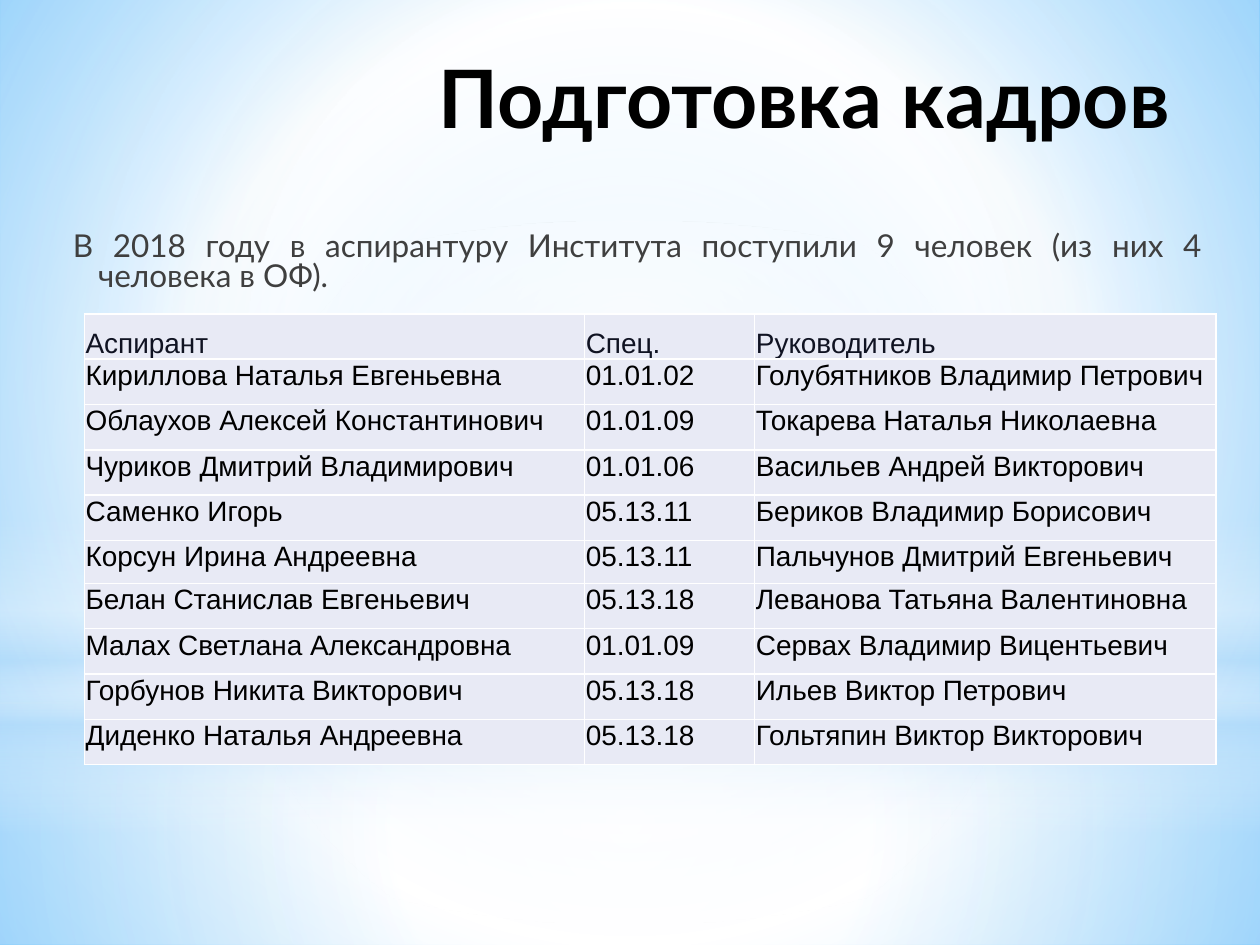
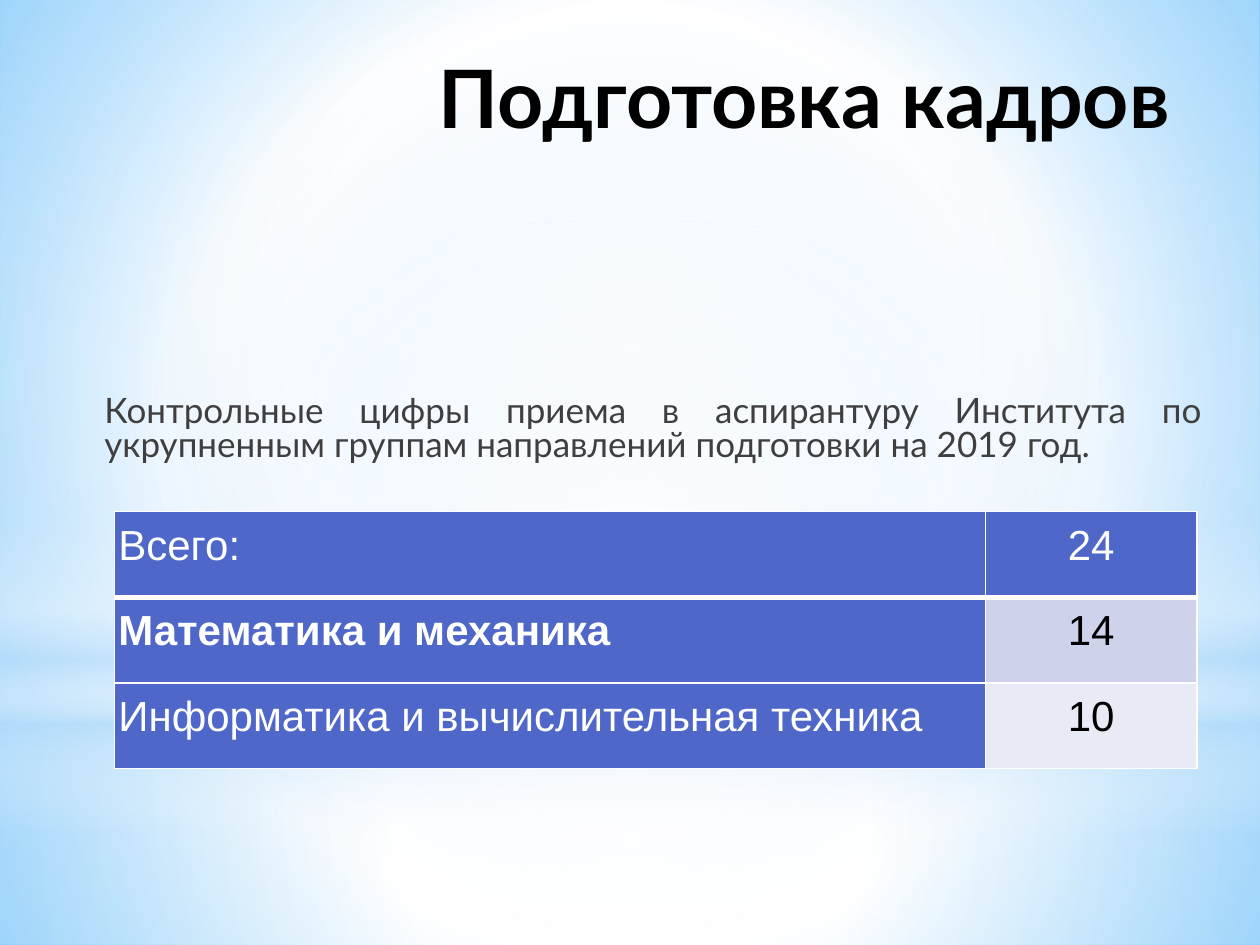
from lxml import etree
from pptx import Presentation
from pptx.dml.color import RGBColor
from pptx.enum import shapes, text
from pptx.oxml import ns
from pptx.util import Inches, Pt

WHITE = RGBColor(0xFF, 0xFF, 0xFF)
BLACK = RGBColor(0, 0, 0)
NAVY = RGBColor(0x10, 0x13, 0x22)
GREY = RGBColor(0x3F, 0x3F, 0x3F)
BLUE = RGBColor(0x4E, 0x67, 0xC8)
LILAC = RGBColor(0xCF, 0xD2, 0xEB)
PALE = RGBColor(0xE8, 0xEA, 0xF5)
MIST = RGBColor(0xB4, 0xDC, 0xFA)
SKY = RGBColor(0x99, 0xD4, 0xFE)
AZURE = RGBColor(0x54, 0xBD, 0xFF)

ROUND = ('<a:path path="circle"><a:fillToRect l="50000" t="50000" '
         'r="50000" b="50000"/></a:path>')
DOWN = '<a:lin ang="5400000" scaled="0"/>'
RECT = shapes.MSO_SHAPE.RECTANGLE
OVAL = shapes.MSO_SHAPE.OVAL
BACK = [(0, SKY, 100), (60, WHITE, 100), (100, AZURE, 100)]
BANDS = [
    (RECT, 5.58, 1.92, ROUND, [(0, WHITE, 90), (37, WHITE, 75), (100, MIST, 78)]),
    (RECT, 0, 5.58, ROUND, [(0, WHITE, 88), (48, WHITE, 61), (100, MIST, 78)]),
    (RECT, 4.12, 2.5, DOWN, [(0, WHITE, 0), (29, WHITE, 29), (45, MIST, 40),
                             (55, WHITE, 25), (65, MIST, 60), (100, WHITE, 0)]),
    (OVAL, 1.75, 5.58, ROUND, [(0, WHITE, 100), (56, WHITE, 0), (100, WHITE, 0)]),
]

PEOPLE = [
    ("Аспирант", "Спец.", "Руководитель"),
    ("Кириллова Наталья Евгеньевна", "01.01.02", "Голубятников Владимир Петрович"),
    ("Облаухов Алексей Константинович", "01.01.09", "Токарева Наталья Николаевна"),
    ("Чуриков Дмитрий Владимирович", "01.01.06", "Васильев Андрей Викторович"),
    ("Саменко Игорь", "05.13.11", "Бериков Владимир Борисович"),
    ("Корсун Ирина Андреевна", "05.13.11", "Пальчунов Дмитрий Евгеньевич"),
    ("Белан Станислав Евгеньевич", "05.13.18", "Леванова Татьяна Валентиновна"),
    ("Малах Светлана Александровна", "01.01.09", "Сервах Владимир Вицентьевич"),
    ("Горбунов Никита Викторович", "05.13.18", "Ильев Виктор Петрович"),
    ("Диденко Наталья Андреевна", "05.13.18", "Гольтяпин Виктор Викторович"),
]
PLACES = [
    ("Всего:", "24"),
    ("Математика и механика", "14"),
    ("Информатика и вычислительная техника", "10"),
]
PAGES = [
    dict(note="В 2018 году в аспирантуру Института поступили 9 человек "
              "(из них 4 человека в ОФ).",
         top=1.8, size=18, left=0.25, hang=-0.2,
         rows=PEOPLE, at=(0.67, 2.49), cols=[3.97, 1.35, 3.66],
         high=[0.36] * 5 + [0.34] + [0.36] * 4),
    dict(note="Контрольные цифры приема в аспирантуру Института по "
              "укрупненным группам направлений подготовки на 2019 год.",
         top=3.1, size=20, left=0.3, hang=0,
         rows=PLACES, at=(0.91, 4.06), cols=[6.91, 1.68], high=[0.68] * 3),
]


def blend(props, stops, way):
    marks = "".join(
        f'<a:gs pos="{pos * 1000}"><a:srgbClr val="{tint}">'
        f'<a:alpha val="{alpha * 1000}"/></a:srgbClr></a:gs>'
        for pos, tint, alpha in stops)
    solid = props.find(ns.qn("a:solidFill"))
    props.replace(solid, etree.fromstring(
        f'<a:gradFill {ns.nsdecls("a")} rotWithShape="1">'
        f'<a:gsLst>{marks}</a:gsLst>{way}</a:gradFill>'))


def write(slide, words, box, size, tint, bold, align):
    frame = slide.shapes.add_textbox(*map(Inches, box)).text_frame
    frame.word_wrap = True
    frame.text = words
    para = frame.paragraphs[0]
    para.alignment = align
    font = para.runs[0].font
    font.name, font.size, font.bold = "Lato", Pt(size), bold
    font.color.rgb = tint
    return para


deck = Presentation()
deck.slide_width, deck.slide_height = Inches(10), Inches(7.5)

for page in PAGES:
    slide = deck.slides.add_slide(deck.slide_layouts[6])
    slide.background.fill.solid()
    blend(slide.background._cSld.bg.bgPr, BACK, ROUND)
    for kind, top, tall, way, stops in BANDS:
        band = slide.shapes.add_shape(kind, 0, Inches(top), Inches(10), Inches(tall))
        band.shadow.inherit = False
        band.line.fill.background()
        band.fill.solid()
        blend(band._element.spPr, stops, way)

    write(slide, "Подготовка кадров", (2.64, 0.33, 6.74, 1.33), 46, BLACK,
          True, text.PP_ALIGN.RIGHT)
    para = write(slide, page["note"], (0.43, page["top"], 9.21, 0.6),
                 page["size"], GREY, False, text.PP_ALIGN.JUSTIFY)
    para.line_spacing = 0.8
    props = para._p.get_or_add_pPr()
    props.set("marL", str(Inches(page["left"])))
    props.set("indent", str(Inches(page["hang"])))

    rows, cols, high = page["rows"], page["cols"], page["high"]
    list_page = rows is PEOPLE
    grid = slide.shapes.add_table(
        len(rows), len(cols), *map(Inches, page["at"]),
        Inches(sum(cols)), Inches(sum(high))).table
    grid.first_row = grid.horz_banding = False
    for col, wide in zip(grid.columns, cols):
        col.width = Inches(wide)
    for r, row in enumerate(rows):
        grid.rows[r].height = Inches(high[r])
        for c, words in enumerate(row):
            cell = grid.cell(r, c)
            cell.text = words
            para = cell.text_frame.paragraphs[0]
            font = para.runs[0].font
            font.name, font.bold = "Arial", False
            pad = Inches(0.01 if list_page else 0.03)
            cell.margin_left = cell.margin_right = cell.margin_top = pad
            cell.margin_bottom = 0 if list_page else pad
            if list_page:
                fill, tint, size = PALE, BLACK if r else NAVY, 16
                if r == 0:
                    cell.vertical_anchor = text.MSO_ANCHOR.BOTTOM
            else:
                size = 24
                para.line_spacing = 1.15
                if c:
                    para.alignment = text.PP_ALIGN.CENTER
                body = r > 0 and c > 0
                fill = (LILAC, PALE)[r - 1] if body else BLUE
                tint = BLACK if body else WHITE
                font.bold = (r, c) == (1, 0)
            font.size = Pt(size)
            font.color.rgb = tint
            cell.fill.solid()
            cell.fill.fore_color.rgb = fill
            for i, side in enumerate("LRTB"):
                thick = not list_page and (r, side) in [(0, "B"), (1, "T")]
                cell._tc.tcPr.insert(i, etree.fromstring(
                    f'<a:ln{side} {ns.nsdecls("a")} w="{Pt(3 if thick else 1)}">'
                    f'<a:solidFill><a:srgbClr val="{WHITE}"/></a:solidFill>'
                    f'</a:ln{side}>'))

deck.save("out.pptx")
